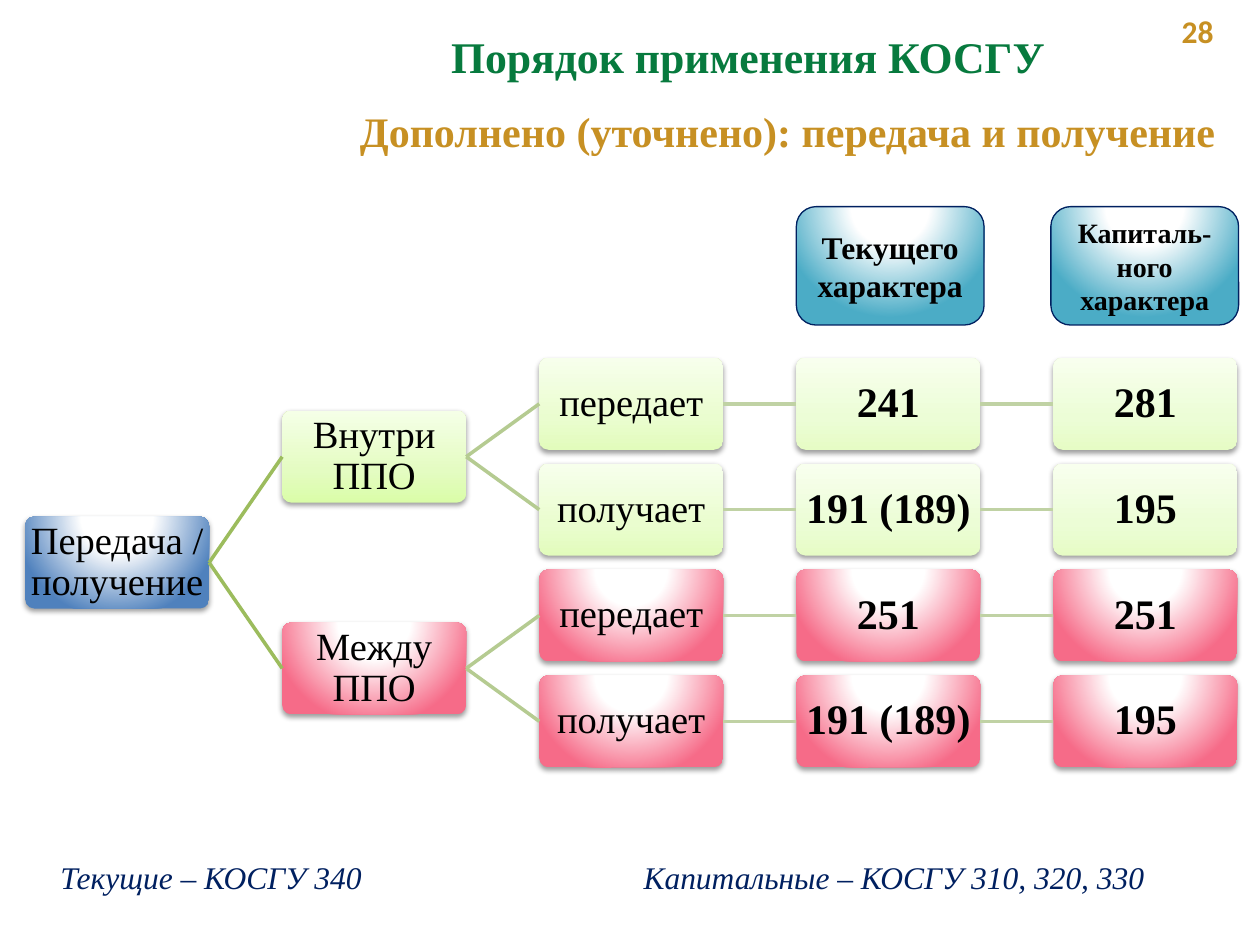
from dataclasses import dataclass

from lxml import etree
from pptx import Presentation
from pptx.dml.color import RGBColor
from pptx.enum.shapes import MSO_CONNECTOR, MSO_SHAPE
from pptx.enum.text import MSO_ANCHOR, PP_ALIGN
from pptx.oxml import parse_xml
from pptx.oxml.ns import nsdecls, qn
from pptx.util import Inches, Pt

ROUNDED = MSO_SHAPE.ROUNDED_RECTANGLE
STRAIGHT = MSO_CONNECTOR.STRAIGHT
TOP, MIDDLE = MSO_ANCHOR.TOP, MSO_ANCHOR.MIDDLE
LEFT, CENTER = PP_ALIGN.LEFT, PP_ALIGN.CENTER
RIGHT_SIDE, LEFT_SIDE = 3, 1

SERIF, SANS = "Times New Roman", "Calibri"
COLORS = {
    "black": "000000",
    "navy": "002060",
    "gold": "C79023",
    "green": "077A3E",
}
LINE_COLORS = {1: "9CBC5D", 2: "B5CB91", 3: "C0D2A4", 4: "C0D2A4"}
GLOWS = {"blue": "4F81BD", "pink": "F66B88", "teal": "4BACC6"}
LIME_STOPS = {
    1: ("DAFDA8", "E4FCC2", "F5FFE7"),
    2: ("E2FCBC", "EAFDCF", "F7FFEC"),
    3: ("E6FCC5", "ECFDD6", "F8FFEE"),
    4: ("E6FCC5", "ECFDD6", "F8FFEE"),
}

TREE_LEFT, TREE_TOP = 0.2, 2.84
COL_STEP, ROW_STEP = 2.04, 0.84
NODE_W, NODE_H = 1.46, 0.73
FIRST_BOLD_COL = 3


@dataclass(frozen=True)
class Label:
    text: str
    left: float
    top: float
    width: float
    height: float
    size: int
    color: str
    bold: bool = False
    italic: bool = False
    font: str = SERIF
    align: PP_ALIGN = LEFT
    anchor: MSO_ANCHOR = MIDDLE


@dataclass(frozen=True)
class Header:
    text: str
    left: float
    size: int


@dataclass(frozen=True)
class Node:
    text: str
    fill: str
    col: int
    row: float
    children: tuple = ()


def write_text(sp, text: str, size: int, color: str, bold: bool = False,
               italic: bool = False, font: str = SERIF,
               align: PP_ALIGN = CENTER, anchor: MSO_ANCHOR = MIDDLE):
    tf = sp.text_frame
    tf.text = text
    tf.word_wrap = True
    tf.vertical_anchor = anchor
    p = tf.paragraphs[0]
    p.alignment = align
    f = p.runs[0].font
    f.name, f.size, f.bold, f.italic = font, Pt(size), bold, italic
    f.color.rgb = RGBColor.from_string(COLORS[color])
    return tf


def set_gradient(sp, fill: str, col: int = 1) -> None:
    if fill == "lime":
        stops = LIME_STOPS[col]
        direction = '<a:lin ang="16200000" scaled="1"/>'
    else:
        stops = ("FFFFFF", "FFFFFF", GLOWS[fill])
        direction = ('<a:path path="circle"><a:fillToRect l="50000" t="-80000" '
                     'r="50000" b="180000"/></a:path>')
    stop_xml = "".join(
        f'<a:gs pos="{pos}"><a:srgbClr val="{color}"/></a:gs>'
        for pos, color in zip((0, 35000, 100000), stops))
    sp._element.spPr.find(qn("a:prstGeom")).addnext(parse_xml(
        f'<a:gradFill {nsdecls("a")} rotWithShape="1">'
        f'<a:gsLst>{stop_xml}</a:gsLst>{direction}</a:gradFill>'))


def add_shadow(sp) -> None:
    sp._element.spPr.find(qn("a:effectLst")).append(parse_xml(
        f'<a:outerShdw {nsdecls("a")} blurRad="40000" dist="20000" '
        'dir="5400000" rotWithShape="0"><a:srgbClr val="000000">'
        '<a:alpha val="38000"/></a:srgbClr></a:outerShdw>'))


def add_label(s, label: Label) -> None:
    sp = s.shapes.add_textbox(Inches(label.left), Inches(label.top),
                              Inches(label.width), Inches(label.height))
    write_text(sp, label.text, label.size, label.color, label.bold,
               label.italic, label.font, label.align, label.anchor)


def add_header(s, header: Header) -> None:
    sp = s.shapes.add_shape(ROUNDED, Inches(header.left), Inches(1.64),
                            Inches(1.49), Inches(0.94))
    sp.shadow.inherit = False
    set_gradient(sp, "teal")
    sp.line.color.rgb = RGBColor.from_string(COLORS["navy"])
    sp.line.width = Pt(0.75)
    write_text(sp, header.text, header.size, "black", bold=True)


def add_link(s, parent, child, color: str) -> None:
    link = s.shapes.add_connector(STRAIGHT, 0, 0, 0, 0)
    link.begin_connect(parent, RIGHT_SIDE)
    link.end_connect(child, LEFT_SIDE)
    link.line.color.rgb = RGBColor.from_string(color)
    link.line.width = Pt(2)
    etree.SubElement(link._element.spPr, qn("a:effectLst"))


def add_node(s, node: Node):
    sp = s.shapes.add_shape(
        ROUNDED, Inches(TREE_LEFT + COL_STEP * node.col),
        Inches(TREE_TOP + ROW_STEP * node.row), Inches(NODE_W), Inches(NODE_H))
    sp.adjustments[0] = 0.1
    sp.shadow.inherit = False
    add_shadow(sp)
    set_gradient(sp, node.fill, node.col)
    sp.line.fill.background()
    bold = node.col >= FIRST_BOLD_COL
    tf = write_text(sp, node.text, 24 if bold else 22, "black", bold)
    tf.margin_left = tf.margin_right = Inches(0.02)
    tf.margin_top = tf.margin_bottom = Inches(0.02)
    tf.paragraphs[0].line_spacing = 0.9
    for child in node.children:
        add_link(s, sp, add_node(s, child), LINE_COLORS[child.col])
    return sp


def chain(texts: tuple, fill: str, row: int, col: int = 2) -> Node:
    rest = (chain(texts[1:], fill, row, col + 1),) if texts[1:] else ()
    return Node(texts[0], fill, col, row, rest)


def branch(text: str, fill: str, first_row: int, gives: tuple) -> Node:
    return Node(text, fill, 1, first_row + 0.5, (
        chain(("передает", *gives), fill, first_row),
        chain(("получает", "191 (189)", "195"), fill, first_row + 1)))


LABELS = [
    Label("28", 9.28, 0.05, 0.55, 0.4, 18, "gold", bold=True, font=SANS, anchor=TOP),
    Label("Порядок применения КОСГУ", 2.94, 0.19, 5.99, 0.52, 25, "green",
          bold=True, align=CENTER, anchor=TOP),
    Label("Дополнено (уточнено): передача и получение", 2.67, 0.62, 7.16, 0.84,
          24, "gold", bold=True, align=CENTER),
    Label("Текущие – КОСГУ 340", 0.38, 6.76, 3.01, 0.4, 18, "navy", italic=True),
    Label("Капитальные – КОСГУ 310, 320, 330", 5.01, 6.76, 4.82, 0.4, 18, "navy",
          italic=True),
]
HEADERS = [
    Header("Текущего характера", 6.32, 18),
    Header("Капиталь-ного характера", 8.34, 16),
]
TREE = Node("Передача / получение", "blue", 0, 1.5, (
    branch("Внутри ППО", "lime", 0, ("241", "281")),
    branch("Между ППО", "pink", 2, ("251", "251"))))


def main() -> None:
    prs = Presentation()
    prs.slide_width, prs.slide_height = Inches(10), Inches(7.5)
    s = prs.slides.add_slide(prs.slide_layouts[6])
    for label in LABELS:
        add_label(s, label)
    add_node(s, TREE)
    for header in HEADERS:
        add_header(s, header)
    prs.save("out.pptx")


if __name__ == "__main__":
    main()
